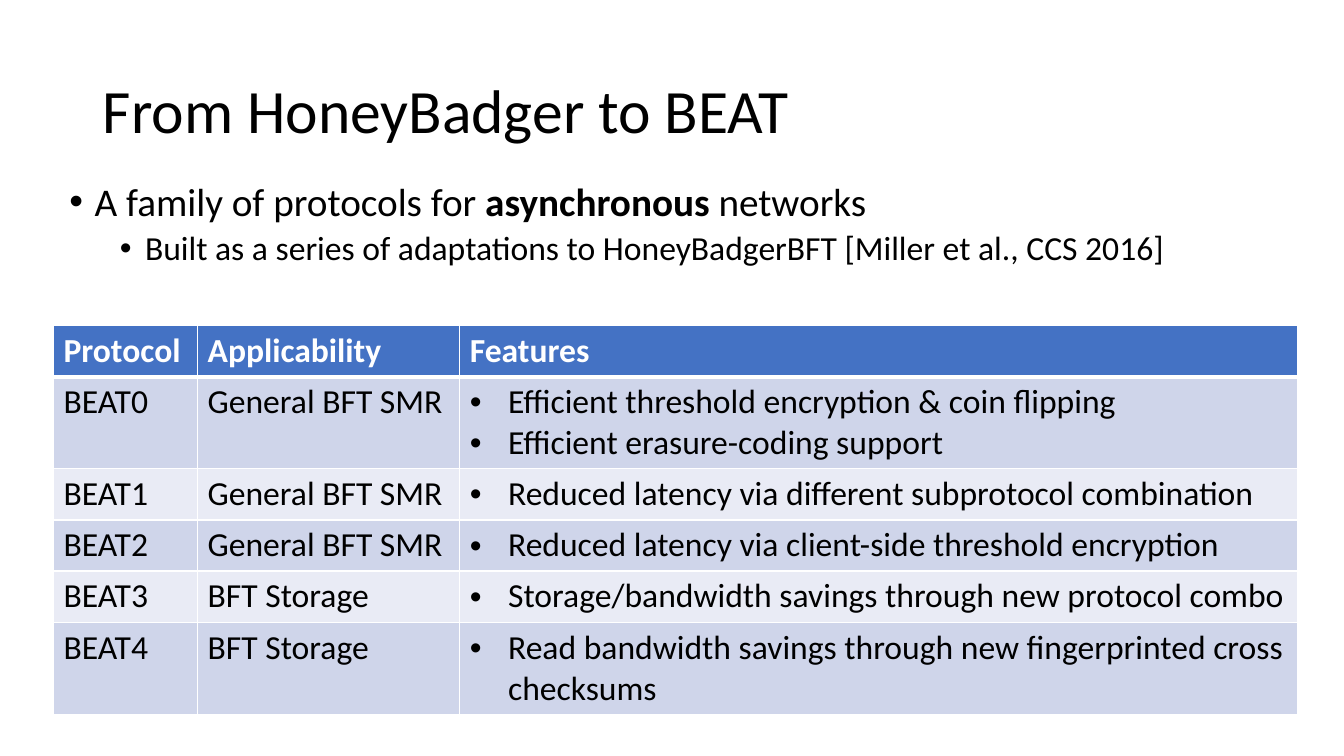
from lxml.etree import SubElement as Sub
from pptx import Presentation
from pptx.dml.color import RGBColor as Rgb
from pptx.enum.text import MSO_ANCHOR as Anchor, MSO_AUTO_SIZE as Fit, PP_ALIGN as Align
from pptx.oxml import parse_xml
from pptx.oxml.ns import nsdecls, qn
from pptx.util import Inches, Pt

FONT = "Calibri"
COLORS = {"text": "000000", "white": "FFFFFF", "head": "4472C4",
          "odd": "CFD5EA", "even": "E9EBF5"}
COLS = [1.43, 2.6, 8.31]
HEAD = ["Protocol", "Applicability", "Features"]
ROWS = [
    ["BEAT0", "General BFT SMR",
     "Efficient threshold encryption & coin flipping\nEfficient erasure-coding support"],
    ["BEAT1", "General BFT SMR", "Reduced latency via different subprotocol combination"],
    ["BEAT2", "General BFT SMR", "Reduced latency via client-side threshold encryption"],
    ["BEAT3", "BFT Storage", "Storage/bandwidth savings through new protocol combo"],
    ["BEAT4", "BFT Storage",
     "Read bandwidth savings through new fingerprinted cross checksums"],
]


def style(para, size, color="text", bold=False):
    for run in para.runs:
        font = run.font
        font.name, font.size, font.bold = FONT, Pt(size), bold
        font.color.rgb = Rgb.from_string(COLORS[color])


def bullet(para, left, hang):
    props = para._p.get_or_add_pPr()
    props.set("marL", str(Inches(left)))
    props.set("indent", str(-Inches(hang)))
    Sub(props, qn("a:buFont"), typeface="Arial")
    Sub(props, qn("a:buChar"), char="•")


def border(cell, top, bottom):
    """Draw white cell edges, with top and bottom widths in points."""
    props = cell._tc.get_or_add_tcPr()
    for spot, (side, width) in enumerate(zip("LRTB", (1, 1, top, bottom))):
        props.insert(spot, parse_xml(
            f'<a:ln{side} {nsdecls("a")} w="{Pt(width)}"><a:solidFill>'
            f'<a:srgbClr val="{COLORS["white"]}"/></a:solidFill></a:ln{side}>'))


def add_title(slide, text):
    title = slide.shapes.title
    title.left, title.top = Inches(0.92), Inches(0.4)
    title.width, title.height = Inches(11.5), Inches(1.45)
    frame = title.text_frame
    frame.text = text
    frame.auto_size = Fit.NONE
    frame.vertical_anchor = Anchor.MIDDLE
    para = frame.paragraphs[0]
    para.alignment = Align.LEFT
    para.line_spacing = 0.9
    style(para, 44)


def add_intro(slide):
    box = slide.shapes.add_textbox(Inches(0.59), Inches(1.76), Inches(11.83), Inches(1.2))
    frame = box.text_frame
    frame.word_wrap = True
    main_line, sub_line = frame.paragraphs[0], frame.add_paragraph()
    for part in ("A family of protocols for ", "asynchronous", " networks"):
        main_line.add_run().text = part
    sub_line.text = "Built as a series of adaptations to HoneyBadgerBFT [Miller et al., CCS 2016]"
    sub_line.level = 1
    for para, size, gap, left in ((main_line, 28, 10, 0.25), (sub_line, 24, 5, 0.75)):
        para.line_spacing = 0.9
        para.space_before = Pt(gap)
        bullet(para, left, 0.25)
        style(para, size)
    main_line.runs[1].font.bold = True


def fill_cell(cell, text, row, listed):
    head = row == 0
    fill = "head" if head else "odd" if row % 2 else "even"
    cell.text_frame.text = text
    cell.fill.solid()
    cell.fill.fore_color.rgb = Rgb.from_string(COLORS[fill])
    border(cell, 3 if row == 1 else 1, 3 if head else 1)
    for para in cell.text_frame.paragraphs:
        if listed:
            bullet(para, 0.38, 0.38)
        style(para, 24, "white" if head else "text", head)


def add_grid(slide):
    data = [HEAD] + ROWS
    frame = slide.shapes.add_table(len(data), len(COLS), Inches(0.53), Inches(3.23),
                                   Inches(12.35), Inches(3.8))
    table = frame.table
    for col, width in zip(table.columns, COLS):
        col.width = Inches(width)
    for row, texts in enumerate(data):
        table.rows[row].height = Inches(0.41)
        for col, text in enumerate(texts):
            fill_cell(table.cell(row, col), text, row, row > 0 and col == 2)
    frame.height = Inches(3.8)


def main():
    deck = Presentation()
    deck.slide_width, deck.slide_height = Inches(13.33), Inches(7.5)
    slide = deck.slides.add_slide(deck.slide_layouts[5])
    add_title(slide, "From HoneyBadger to BEAT")
    add_grid(slide)
    add_intro(slide)
    deck.save("out.pptx")


if __name__ == "__main__":
    main()
